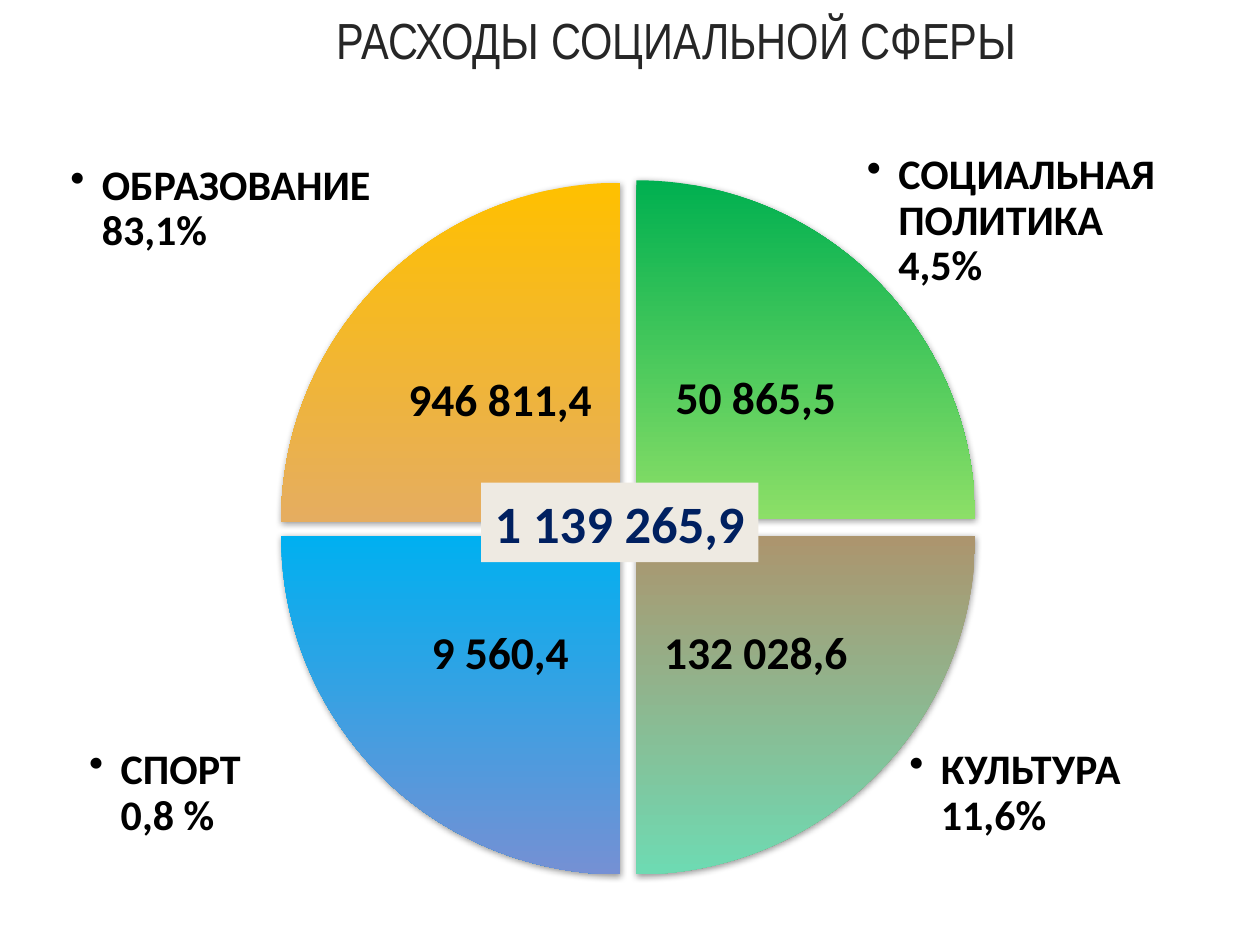
from lxml import etree
from pptx import Presentation
from pptx.dml.color import RGBColor
from pptx.enum.shapes import MSO_SHAPE
from pptx.enum.text import MSO_ANCHOR, MSO_AUTO_SIZE, PP_ALIGN
from pptx.oxml import parse_xml
from pptx.oxml.ns import nsdecls, qn
from pptx.util import Pt

CENTER = PP_ALIGN.CENTER
LEFT = PP_ALIGN.LEFT
TOP, MIDDLE, BOTTOM = MSO_ANCHOR.TOP, MSO_ANCHOR.MIDDLE, MSO_ANCHOR.BOTTOM
NO_AUTOFIT = MSO_AUTO_SIZE.NONE
WEDGE = MSO_SHAPE.PIE_WEDGE
RECTANGLE = MSO_SHAPE.RECTANGLE

BLACK = RGBColor(0x00, 0x00, 0x00)
TITLE_GRAY = RGBColor(0x26, 0x26, 0x26)
NAVY = RGBColor(0x00, 0x20, 0x60)
CREAM = RGBColor(0xEE, 0xEA, 0xE2)
AMBER, SAND = RGBColor(0xFF, 0xC0, 0x00), RGBColor(0xE5, 0xAD, 0x60)
GREEN, LIME = RGBColor(0x00, 0xB0, 0x50), RGBColor(0x8C, 0xDF, 0x67)
BROWN, MINT = RGBColor(0xAC, 0x95, 0x6E), RGBColor(0x6E, 0xDA, 0xB2)
SKY, PERIWINKLE = RGBColor(0x00, 0xB0, 0xF0), RGBColor(0x75, 0x90, 0xD4)

WEDGE_SIDE = 193.7
VALUE_SIDE = 136.8
LABEL_WIDTH, LABEL_HEIGHT = 186.5, 101.5

SECTORS = [
    ("946 811,4", 160.6, 104.4, 0, AMBER, SAND),
    ("50 865,5", 363.6, 103, 90, GREEN, LIME),
    ("132 028,6", 363.6, 306, 180, BROWN, MINT),
    ("9 560,4", 160.6, 306, 270, SKY, PERIWINKLE),
]
LABELS = [
    ("КУЛЬТУРА 11,6%", 512.6, 420.5),
    ("СПОРТ\v0,8 %", 43.9, 420.5),
    ("СОЦИАЛЬНАЯ ПОЛИТИКА 4,5%", 488.2, 80.6),
    ("ОБРАЗОВАНИЕ 83,1%", 33.1, 86.4),
]


def place(shape, left, top, width, height):
    """Move and size a shape in points."""
    shape.left, shape.top = Pt(left), Pt(top)
    shape.width, shape.height = Pt(width), Pt(height)


def write(shape, text, size, color, align=CENTER, anchor=MIDDLE,
          inset=None, font="Calibri", bold=True, bullet=False):
    """Fill a shape with one formatted paragraph."""
    frame = shape.text_frame
    frame.word_wrap = True
    frame.auto_size = NO_AUTOFIT
    frame.vertical_anchor = anchor
    if inset is not None:
        frame.margin_left = frame.margin_right = Pt(inset)
        frame.margin_top = frame.margin_bottom = Pt(inset)
    para = frame.paragraphs[0]
    para.text = text
    para.alignment = align
    para.line_spacing = 0.9 if inset is not None else 1.0
    if bullet:
        properties = para._p.get_or_add_pPr()
        properties.set("marL", str(Pt(18)))
        properties.set("indent", str(Pt(-18)))
        etree.SubElement(properties, qn("a:buChar")).set("char", "•")
    para.font.name = font
    para.font.size = Pt(size)
    para.font.bold = bold
    para.font.color.rgb = color


def add_text(page, text, left, top, width, height, size, **style):
    """Add a black text box."""
    box = page.shapes.add_textbox(Pt(left), Pt(top), Pt(width), Pt(height))
    write(box, text, size, BLACK, **style)


def add_wedge(page, left, top, rotation, upper, lower):
    """Add a quarter sector with an upright gradient and a soft shadow."""
    wedge = page.shapes.add_shape(
        WEDGE, Pt(left), Pt(top), Pt(WEDGE_SIDE), Pt(WEDGE_SIDE))
    wedge.rotation = rotation
    wedge.fill.gradient()
    wedge.fill.gradient_angle = 270
    for stop, color, position in zip(wedge.fill.gradient_stops, (upper, lower), (0, 1)):
        stop.color.rgb = color
        stop.position = position
    wedge.line.fill.background()
    properties = wedge._element.spPr
    properties.find(qn("a:gradFill")).set("rotWithShape", "0")
    properties.append(parse_xml(
        f'<a:effectLst {nsdecls("a")}><a:outerShdw blurRad="{Pt(4)}" dist="{Pt(1)}" '
        'dir="5280000" rotWithShape="0"><a:srgbClr val="000000">'
        '<a:alpha val="40000"/></a:srgbClr></a:outerShdw></a:effectLst>'))


def add_sector(page, value, left, top, rotation, upper, lower):
    """Add a wedge and its value, set against the wedge's inner corner."""
    add_wedge(page, left, top, rotation, upper, lower)
    shift = WEDGE_SIDE - VALUE_SIDE
    value_left = left + shift if rotation in (0, 270) else left
    value_top = top + shift if rotation in (0, 90) else top
    add_text(page, value, value_left, value_top, VALUE_SIDE, VALUE_SIDE, 26, inset=14.4)


def add_total(page, text):
    """Add the total in the middle of the wheel."""
    box = page.shapes.add_shape(RECTANGLE, Pt(275), Pt(275.8), Pt(158.4), Pt(45.4))
    box.shadow.inherit = False
    box.fill.solid()
    box.fill.fore_color.rgb = CREAM
    box.line.fill.background()
    write(box, text, 30, NAVY)


def main():
    """Build the slide and save it."""
    deck = Presentation()
    deck.slide_width, deck.slide_height = Pt(720), Pt(540)
    page = deck.slides.add_slide(deck.slide_layouts[5])
    title = page.shapes.title
    place(title, 54, 0, 666, 43.2)
    write(title, "РАСХОДЫ СОЦИАЛЬНОЙ СФЕРЫ", 29, TITLE_GRAY,
          anchor=BOTTOM, font="Arial Narrow", bold=False)
    for text, left, top in LABELS:
        add_text(page, text, left, top, LABEL_WIDTH, LABEL_HEIGHT, 24,
                 align=LEFT, anchor=TOP, inset=7.2, bullet=True)
    for sector in SECTORS:
        add_sector(page, *sector)
    add_total(page, "1 139 265,9")
    deck.save("out.pptx")


if __name__ == "__main__":
    main()
